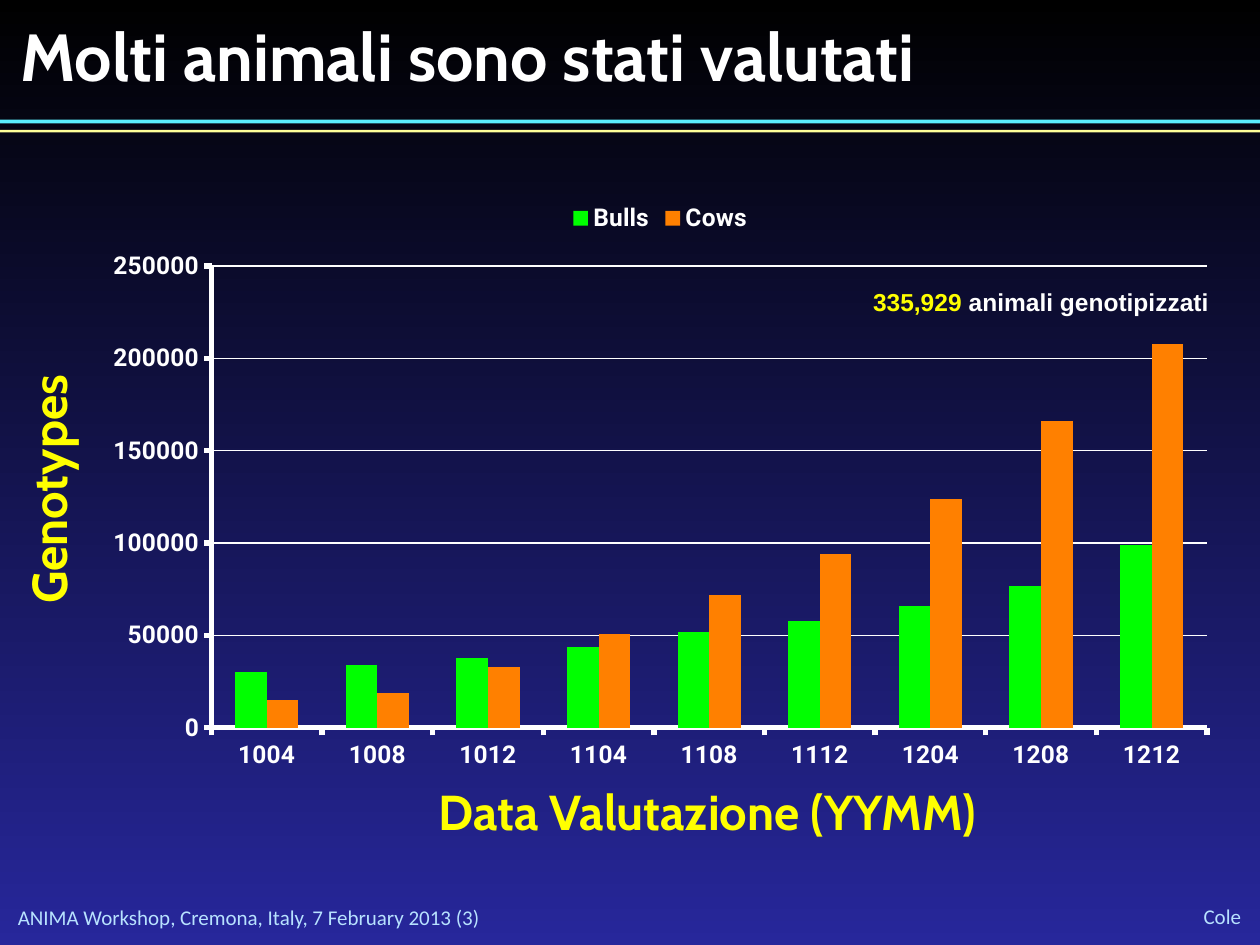
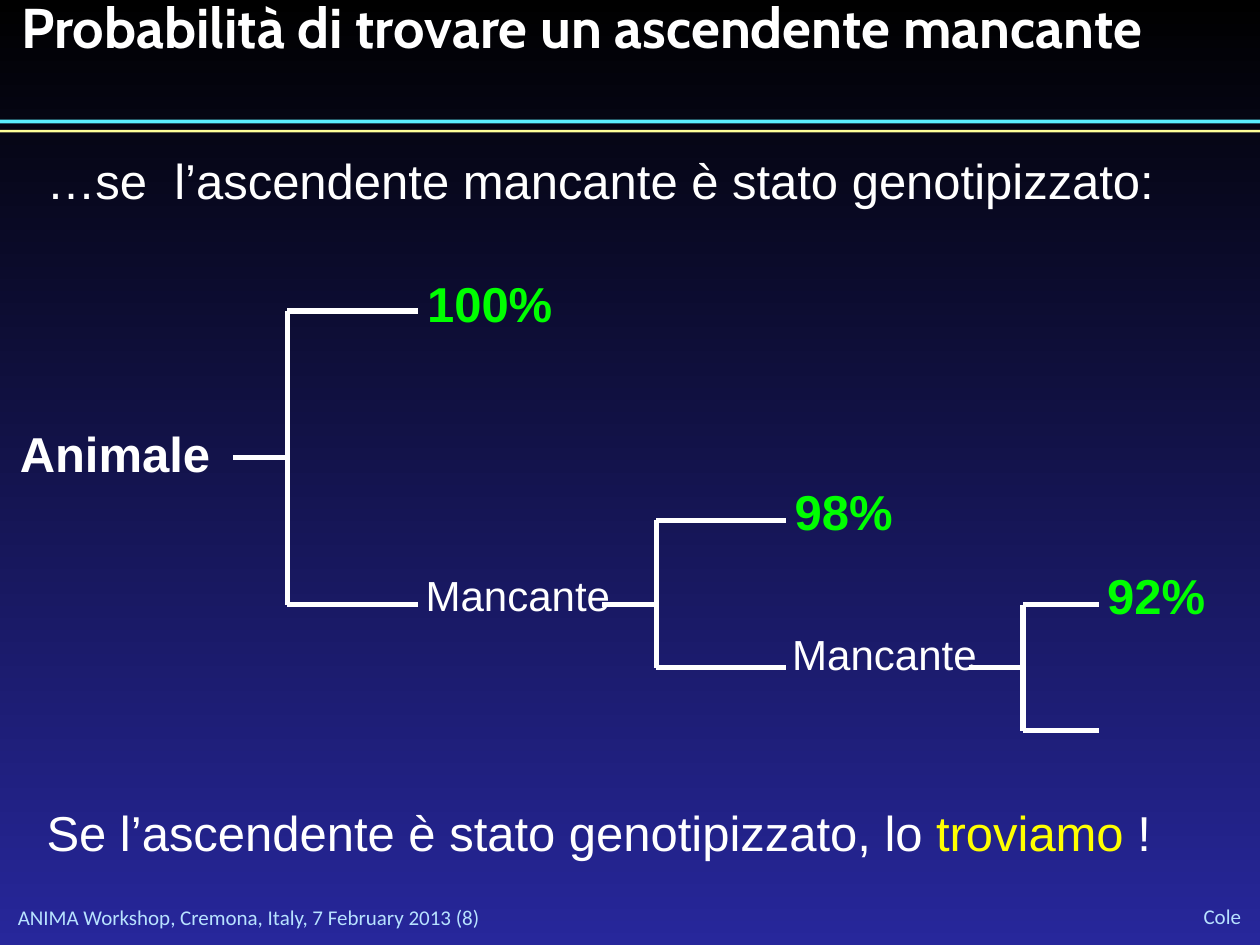
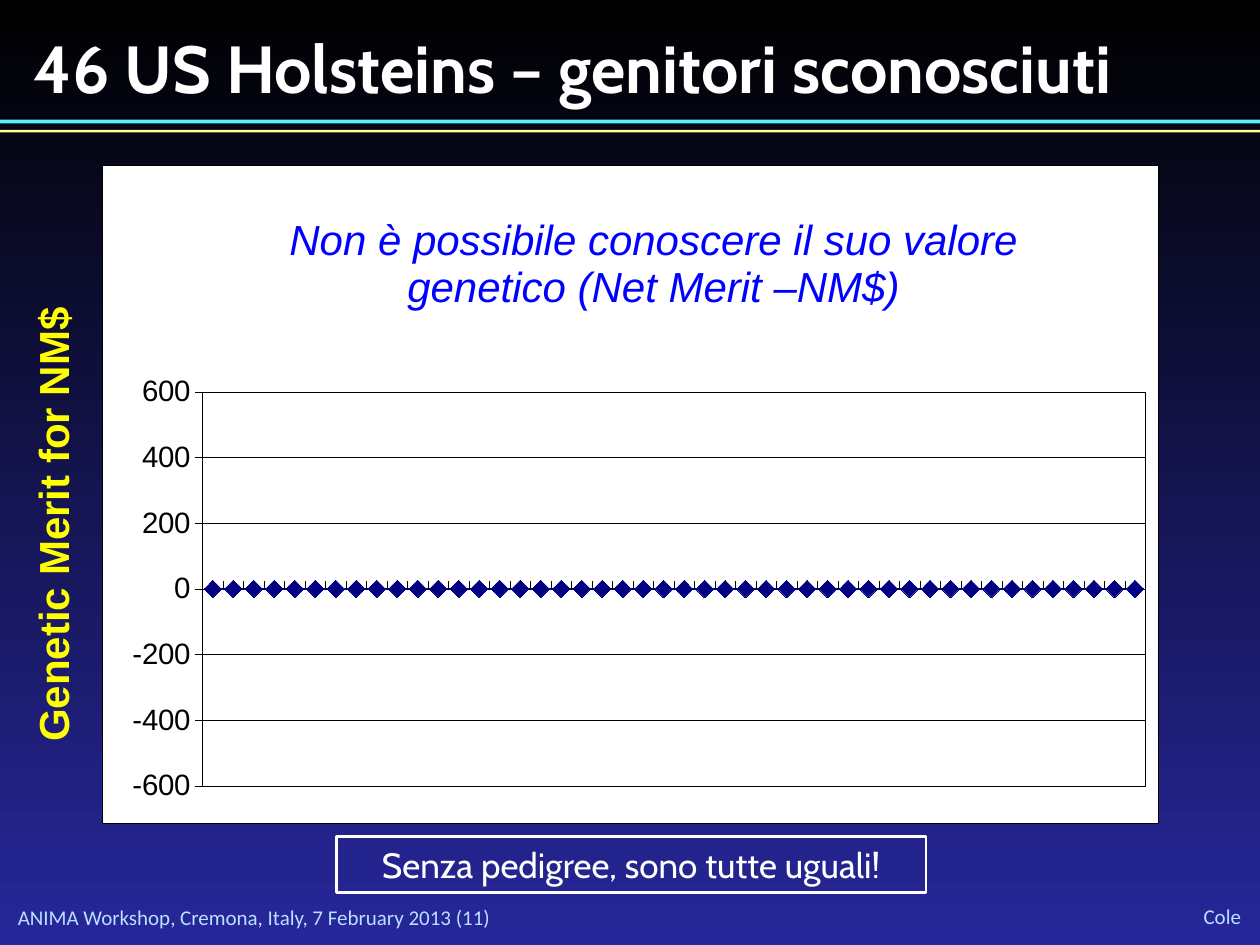
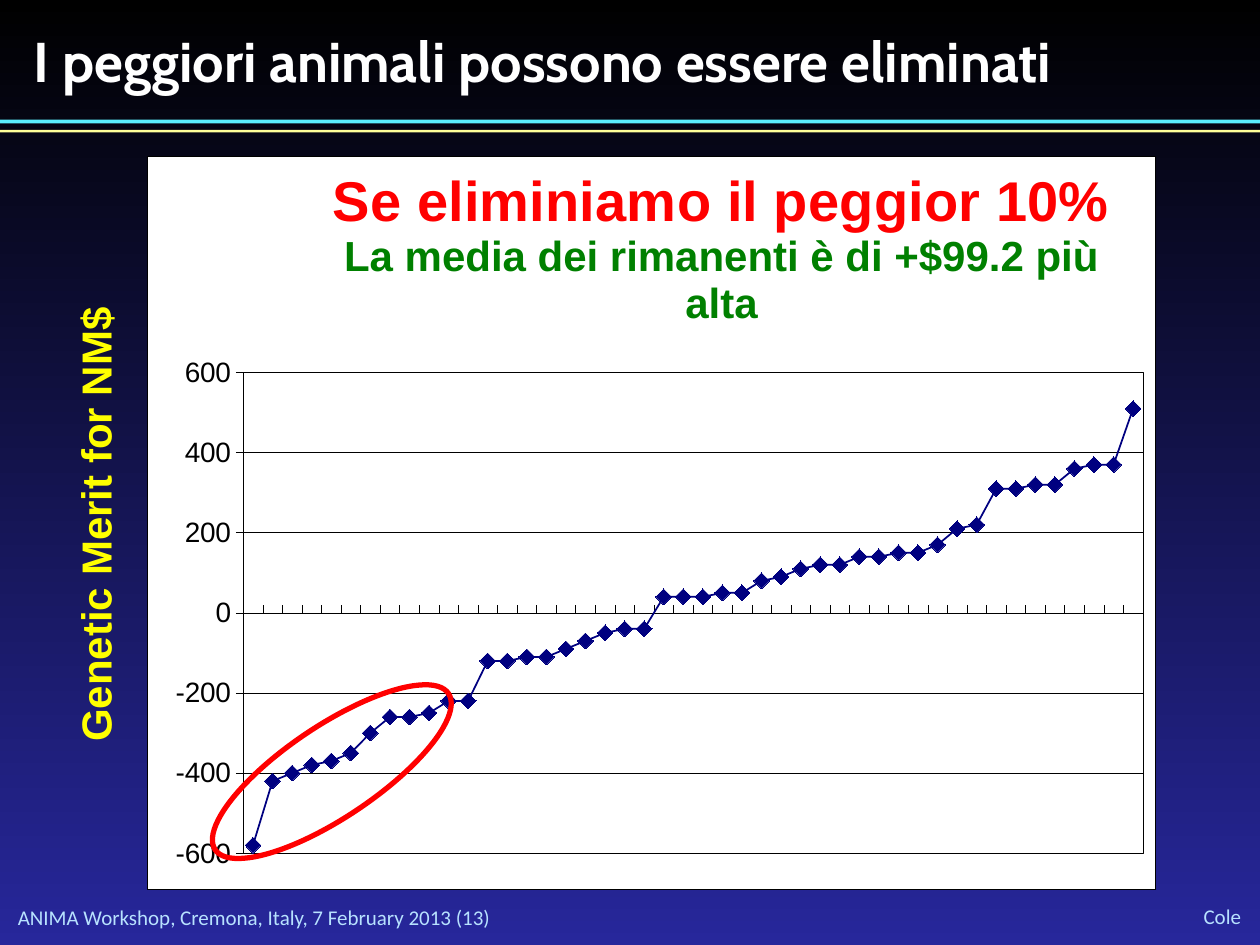
from lxml import etree
from pptx import Presentation
from pptx.chart import data
from pptx.dml import color
from pptx.enum import chart as ch, shapes, text
from pptx.oxml import ns
from pptx.util import Cm, Pt

WHITE, BLACK, YELLOW, GREEN, RED = "FFFFFF", "000000", "FFFF00", "00FF00", "FF0000"
NAVY, PALE = "000080", "B8E2FF"
CENTER, RIGHT = text.PP_ALIGN.CENTER, text.PP_ALIGN.RIGHT
DATES = "1004 1008 1012 1104 1108 1112 1204 1208 1212".split()
HERDS = {
    "Bulls": (GREEN, [30000, 34000, 38000, 44000, 52000, 58000, 66000, 77000, 99000]),
    "Cows": ("FF8000", [15000, 19000, 33000, 51000, 72000, 94000, 124000, 166000, 208000]),
}
MERIT = [-580, -420, -400, -380, -370, -350, -300, -260, -260, -250, -220, -220,
         -120, -120, -110, -110, -90, -70, -50, -40, -40, 40, 40, 40, 50, 50,
         80, 90, 110, 120, 120, 140, 140, 150, 150, 170, 210, 220, 310, 310,
         320, 320, 360, 370, 370, 510]


def rgb(code):
    """Turn a hex string into a colour."""
    return color.RGBColor.from_string(code)


def span(*sizes):
    """Turn centimetres into lengths."""
    return [Cm(size) for size in sizes]


def style(font, size, face, tint, bold=False, italic=False):
    """Set the look of a font."""
    font.size, font.name, font.bold, font.italic = Pt(size), face, bold, italic
    font.color.rgb = rgb(tint)


def stroke(line, tint, width):
    """Set the colour and width of a line."""
    line.color.rgb = rgb(tint)
    line.width = Pt(width)


def pad(frame, gap):
    """Give a text frame the same margin on all sides."""
    frame.margin_left = frame.margin_right = Cm(gap)
    frame.margin_top = frame.margin_bottom = Cm(gap)


def label(slide, box, words, size, face, tint=WHITE, bold=False, align=None, turn=0):
    """Add a text box; words is a string or a list of (text, colour) runs."""
    shape = slide.shapes.add_textbox(*span(*box))
    shape.rotation = turn
    frame = shape.text_frame
    frame.word_wrap = False
    para = frame.paragraphs[0]
    para.alignment = align
    style(para.font, size, face, tint, bold)
    if isinstance(words, str):
        para.add_run().text = words
    else:
        for word, hue in words:
            run = para.add_run()
            run.text = word
            run.font.color.rgb = rgb(hue)
    return shape


def footer(slide, box, words, align=None):
    """Add a small footer line."""
    frame = label(slide, box, words, 12, "Calibri", PALE, align=align).text_frame
    frame.vertical_anchor = text.MSO_ANCHOR.MIDDLE
    frame.word_wrap = True
    pad(frame, 0)
    return frame


def band(slide, top, high, tint):
    """Add a thin band across the slide."""
    shape = slide.shapes.add_shape(shapes.MSO_SHAPE.RECTANGLE, *span(0, top, 25.4, high))
    shape.shadow.inherit = False
    shape.fill.solid()
    shape.fill.fore_color.rgb = rgb(tint)
    shape.line.fill.background()


def theme(deck, layout):
    """Put the backdrop on the master and the shared parts on the layout."""
    fill = deck.slide_master.background.fill
    fill.gradient()
    fill.gradient_angle = 270
    for stop, tint in zip(fill.gradient_stops, (BLACK, "27279B")):
        stop.color.rgb = rgb(tint)
    for item in list(layout.placeholders)[1:]:
        item.element.getparent().remove(item.element)


def share(slide, layout):
    """Draw the bands and the name, then move them to the layout."""
    band(slide, 2.41, 0.08, "5BEFFF")
    band(slide, 2.62, 0.05, "FFFF99")
    footer(slide, (22.15, 18.21, 2.87, 0.53), "Cole", RIGHT)
    for shape in list(slide.shapes)[1:]:
        layout.shapes.element.append(shape.element)


def page(deck, layout, title, size, box, number, gap=0):
    """Add a slide with its title and numbered footer."""
    slide = deck.slides.add_slide(layout)
    if len(deck.slides) == 1:
        share(slide, layout)
    head = slide.shapes.title
    head.left, head.top, head.width, head.height = span(*box)
    frame = head.text_frame
    frame.text = title
    frame.auto_size = text.MSO_AUTO_SIZE.NONE
    frame.vertical_anchor = text.MSO_ANCHOR.TOP
    pad(frame, gap / 2)
    frame.margin_left = Cm(gap)
    para = frame.paragraphs[0]
    para.alignment = text.PP_ALIGN.LEFT
    style(para.font, size, "Cabin", WHITE, True)
    footer(slide, (0.36, 18.24, 13.26, 0.51),
           f"ANIMA Workshop, Cremona, Italy, 7 February 2013 ({number})")
    return slide


def sub(node, tag, **attrs):
    """Add an XML child."""
    return etree.SubElement(node, ns.qn(tag), **attrs)


def place(node, **sizes):
    """Fix the layout of a chart part as shares of the chart."""
    old = node.find(ns.qn("c:layout"))
    if old is not None:
        node.remove(old)
    layout = etree.Element(ns.qn("c:layout"))
    node.insert(0 if node.find(ns.qn("c:tx")) is None else 1, layout)
    manual = sub(layout, "c:manualLayout")
    if "w" in sizes:
        sub(manual, "c:layoutTarget", val="inner")
    for key in "xy":
        sub(manual, f"c:{key}Mode", val="edge")
    for key, size in sizes.items():
        sub(manual, f"c:{key}", val=str(size))


def panel():
    """Make a white fill with a thin black border."""
    props = etree.Element(ns.qn("c:spPr"))
    sub(sub(props, "a:solidFill"), "a:srgbClr", val=WHITE)
    line = sub(props, "a:ln", w=str(Pt(0.25)))
    sub(sub(line, "a:solidFill"), "a:srgbClr", val=BLACK)
    return props


def plot(slide, kind, box, cats, rows, area):
    """Add a chart and fix its plot area."""
    table = data.CategoryChartData()
    table.categories = cats
    for name, vals in rows:
        table.add_series(name, vals)
    chart = slide.shapes.add_chart(kind, *span(*box), table).chart
    chart.has_legend = False
    chart.has_title = False
    chart.plots[0].vary_by_categories = False
    place(chart.element.find(".//" + ns.qn("c:plotArea")), **dict(zip("xywh", area)))
    return chart


def axes(chart, low, high, step, tint, width, grid):
    """Scale the value axis and style both axes."""
    axis = chart.value_axis
    axis.minimum_scale, axis.maximum_scale, axis.major_unit = low, high, step
    axis.major_tick_mark = ch.XL_TICK_MARK.OUTSIDE
    axis.has_major_gridlines = True
    stroke(axis.major_gridlines.format.line, tint, grid)
    for item in (axis, chart.category_axis):
        stroke(item.format.line, tint, width)


def bars(slide):
    """Add the column chart of genotypes."""
    rows = [(name, vals) for name, (_, vals) in HERDS.items()]
    chart = plot(slide, ch.XL_CHART_TYPE.COLUMN_CLUSTERED, (1.83, 3.81, 22.96, 11.94),
                 DATES, rows, (0.106, 0.13, 0.874, 0.78))
    style(chart.font, 14, "Roboto", WHITE, True)
    axes(chart, 0, 250000, 50000, WHITE, 3, 0.75)
    chart.category_axis.major_tick_mark = ch.XL_TICK_MARK.OUTSIDE
    chart.has_legend = True
    chart.legend.position = ch.XL_LEGEND_POSITION.TOP
    chart.legend.include_in_layout = False
    style(chart.legend.font, 14, "Roboto", WHITE, True)
    chart.plots[0].gap_width = 150
    chart.plots[0].overlap = 0
    for row in chart.plots[0].series:
        row.format.fill.solid()
        row.format.fill.fore_color.rgb = rgb(HERDS[row.name][0])


def curve(slide, box, vals, area, size, mark, spot, lines):
    """Add a line chart of merit; lines holds title rows with their styles."""
    cats = [str(i) for i in range(1, len(vals) + 1)]
    chart = plot(slide, ch.XL_CHART_TYPE.LINE_MARKERS, box, cats, [("Series 1", vals)], area)
    style(chart.font, size, "Arial", BLACK)
    axes(chart, -600, 600, 200, BLACK, 0.25, 0.25)
    chart.category_axis.major_tick_mark = ch.XL_TICK_MARK.INSIDE
    chart.category_axis.tick_label_position = ch.XL_TICK_LABEL_POSITION.NONE
    row = chart.plots[0].series[0]
    row.smooth = False
    stroke(row.format.line, NAVY, 1)
    row.marker.style = ch.XL_MARKER_STYLE.DIAMOND
    row.marker.size = mark
    row.marker.format.fill.solid()
    row.marker.format.fill.fore_color.rgb = rgb(NAVY)
    stroke(row.marker.format.line, NAVY, 0.75)
    frame = chart.chart_title.text_frame
    for i, (words, *looks) in enumerate(lines):
        para = frame.add_paragraph() if i else frame.paragraphs[0]
        run = para.add_run()
        run.text = words
        style(run.font, looks[0], "Arial", *looks[1:])
    root = chart.element
    place(root.find(".//" + ns.qn("c:title")), x=spot[0], y=spot[1])
    root.find(".//" + ns.qn("c:plotArea")).append(panel())
    root.find(ns.qn("c:chart")).addnext(panel())


def rule(slide, *ends):
    """Add a white line between two points."""
    line = slide.shapes.add_connector(shapes.MSO_CONNECTOR.STRAIGHT, *span(*ends))
    stroke(line.line, WHITE, 3)
    sub(line.element.spPr, "a:effectLst")


def fork(slide, stem, joint, tip, mid, top, low):
    """Draw one branching of the pedigree."""
    rule(slide, stem, mid, joint, mid)
    rule(slide, joint, top, joint, low)
    for y in (top, low):
        rule(slide, joint, y, tip, y)


def hollow(slide, kind, box, tint, width, turn=0):
    """Add an unfilled outlined shape."""
    shape = slide.shapes.add_shape(kind, *span(*box))
    shape.shadow.inherit = False
    shape.fill.background()
    stroke(shape.line, tint, width)
    shape.rotation = turn
    return shape


def side(slide, left):
    """Add the upright caption beside a merit chart."""
    label(slide, (left, 9.93, 9.27, 1.27), "Genetic Merit for NM$", 24, "Arial",
          YELLOW, True, turn=270)


def counts(deck, layout):
    """Build the slide on evaluated animals."""
    slide = page(deck, layout, "Molti animali sono stati valutati", 38,
                 (0.41, 0.3, 24.54, 1.63), 3)
    label(slide, (7.98, 15.62, 12.55, 1.45), "Data Valutazione (YYMM)", 28, "Cabin",
          YELLOW, True, CENTER)
    label(slide, (-4.57, 9.14, 11.07, 1.45), "Genotypes", 28, "Cabin",
          YELLOW, True, CENTER, 270)
    bars(slide)
    label(slide, (17.35, 5.66, 7.57, 0.86),
          [("335,929 ", YELLOW), ("animali genotipizzati", WHITE)], 14, "Arial", bold=True)


def tree(deck, layout):
    """Build the slide on missing ancestors."""
    slide = page(deck, layout, "Probabilità di trovare un ascendente mancante", 32,
                 (0.43, -0.15, 24.79, 2.74), 8)
    label(slide, (0.69, 2.9, 23.95, 1.45),
          "…se  l’ascendente mancante è stato genotipizzato:", 28, "Arial")
    fork(slide, 4.7, 5.79, 8.43, 9.22, 6.27, 12.19)
    fork(slide, 12.14, 13.23, 15.85, 12.19, 10.49, 13.46)
    fork(slide, 19.53, 20.62, 22.15, 13.46, 12.19, 14.73)
    label(slide, (0.15, 8.41, 4.55, 1.45), "Animale", 28, "Arial", bold=True)
    for left, top, wide in ((8.33, 11.35, 4.42), (15.72, 12.55, 4.27)):
        label(slide, (left, top, wide, 1.27), "Mancante", 24, "Arial")
    for left, top, wide, rate in ((8.36, 5.38, 3.18, "100%"), (15.77, 9.58, 2.57, "98%"),
                                  (22.07, 11.28, 2.57, "92%")):
        label(slide, (left, top, wide, 1.45), rate, 28, "Arial", GREEN, True)
    label(slide, (0.69, 16.05, 23.83, 1.45),
          [("Se l’ascendente è stato genotipizzato, lo ", WHITE),
           ("troviamo ", YELLOW), ("!", WHITE)], 28, "Arial")


def flat(deck, layout):
    """Build the slide on unknown parents."""
    slide = page(deck, layout, "46 US Holsteins – genitori sconosciuti", 38,
                 (0.43, 0.41, 24.36, 1.63), 11, 0.25)
    curve(slide, (2.06, 3.33, 21.29, 13.28), [0] * len(MERIT),
          (0.095, 0.344, 0.893, 0.599), 16.8, 10, (0.17, 0.06),
          [("Non è possibile conoscere il suo valore genetico (Net Merit –NM$)",
            24, "0000FF", False, True)])
    box = (6.78, 16.87, 11.89, 1.12)
    hollow(slide, shapes.MSO_SHAPE.RECTANGLE, box, WHITE, 1.5)
    label(slide, box, "Senza pedigree, sono tutte uguali!", 20, "Cabin", align=CENTER)
    side(slide, -3.58)


def worst(deck, layout):
    """Build the slide on culling the worst animals."""
    slide = page(deck, layout, "I peggiori animali possono essere eliminati", 32,
                 (0.43, 0.41, 24.36, 1.63), 13, 0.25)
    curve(slide, (2.97, 3.15, 20.32, 14.78), MERIT,
          (0.095, 0.295, 0.893, 0.656), 16, 9, (0.18, 0.01),
          [("Se eliminiamo il peggior 10%", 32, RED, True),
           ("La media dei rimanenti è di +$99.2 più alta", 24, "008000", True)])
    hollow(slide, shapes.MSO_SHAPE.OVAL, (3.86, 14.63, 5.66, 1.85), RED, 3, 326.2)
    side(slide, -2.72)


def main():
    """Build and save the deck."""
    deck = Presentation()
    deck.slide_width, deck.slide_height = span(25.4, 19.05)
    layout = deck.slide_layouts.get_by_name("Title Only")
    theme(deck, layout)
    for build in (counts, tree, flat, worst):
        build(deck, layout)
    deck.save("out.pptx")


if __name__ == "__main__":
    main()
